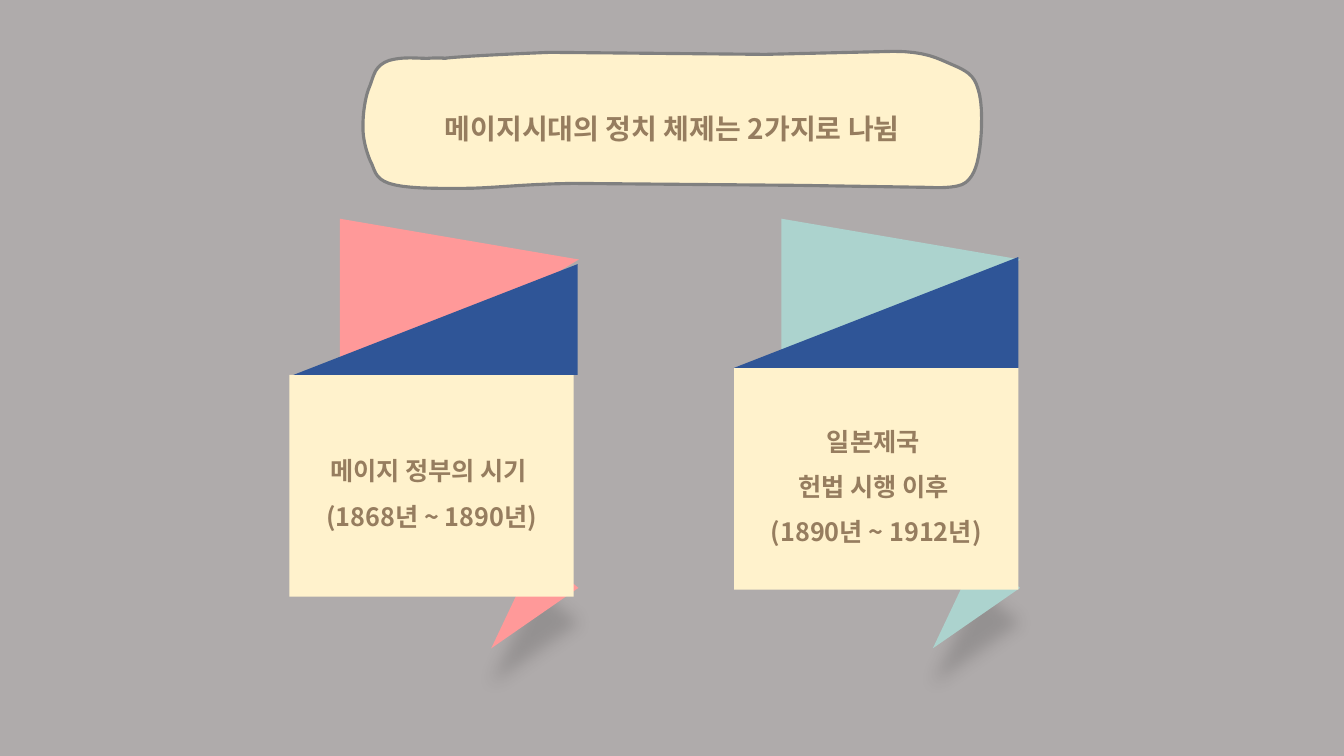
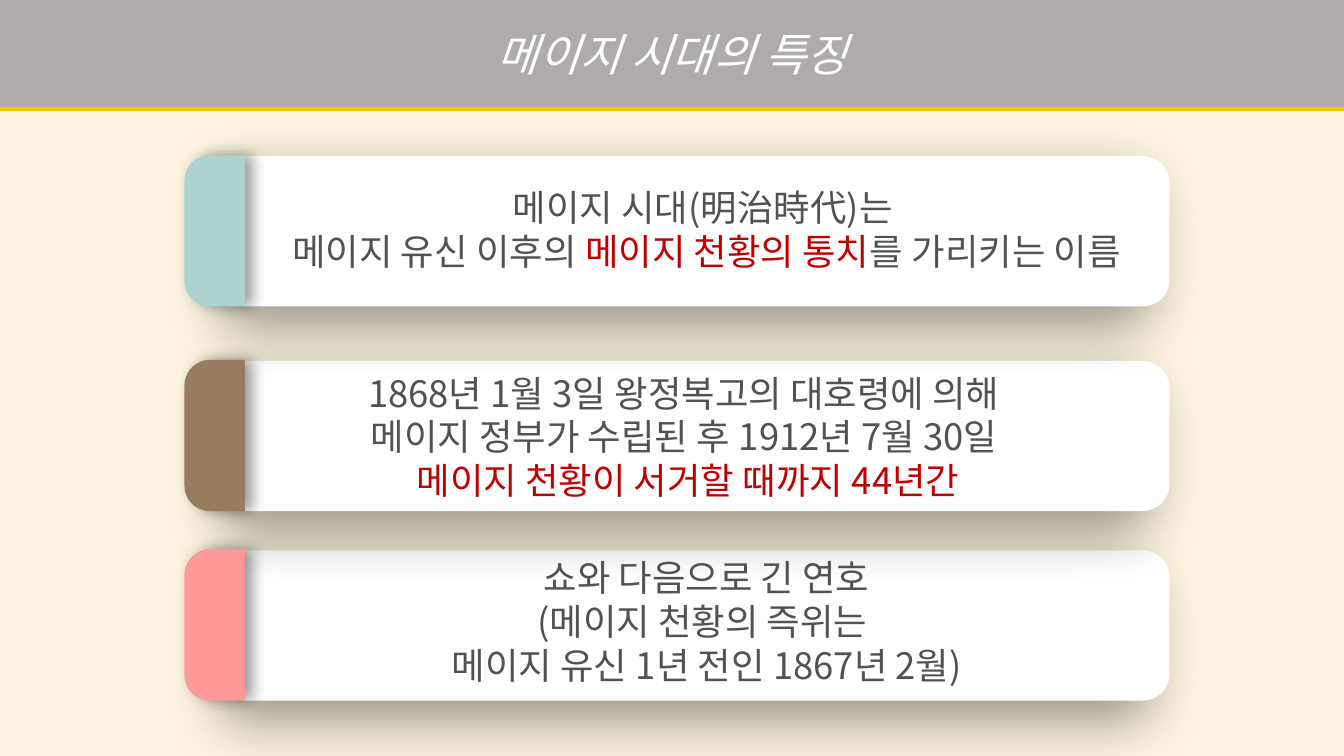
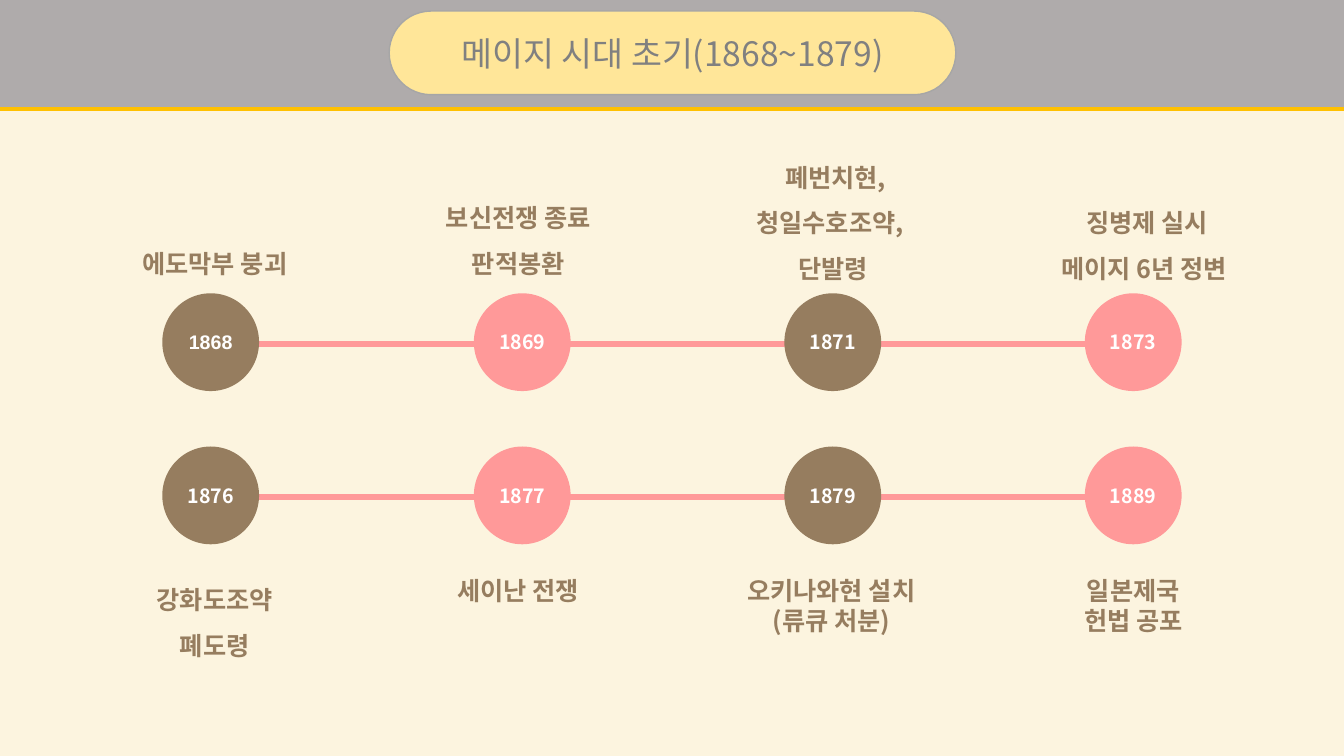
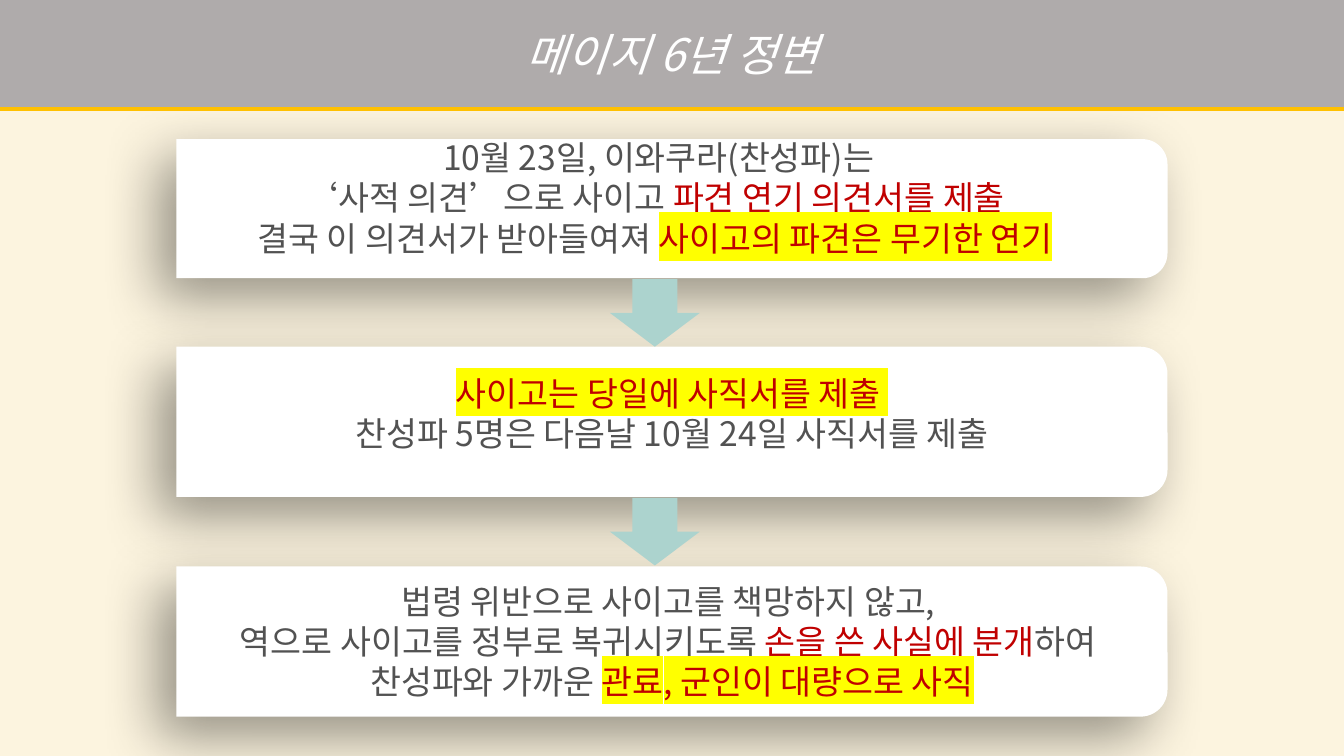
import pptx
import pptx.util
import pptx.dml.color
import pptx.enum.shapes
import pptx.enum.text
import pptx.oxml.ns
import lxml.etree

Inches = pptx.util.Inches
Pt = pptx.util.Pt
KIND = pptx.enum.shapes.MSO_SHAPE
qn = pptx.oxml.ns.qn

FACE = "Noto Sans CJK KR"
GRAY, CREAM, SAND = "AFABAB", "FCF4DF", "FFF2CC"
BROWN, PINK, MINT, NAVY = "967D5F", "FF9999", "ACD3CE", "2F5597"
WHITE, INK, RED, DIM = "FFFFFF", "525252", "C00000", "808080"
YELLOW, GOLD = "FFFF00", "FFC000"

CLAIM = "메이지시대의 정치 체제는 2가지로 나뉨"
RIBBONS = [
    (PINK, 0, (2.87, 3.72), (2.91, 2.62),
     ["메이지 정부의 시기 ", "(1868년 ~ 1890년)"]),
    (MINT, 4.38, (7.28, 3.65), (7.28, 2.55),
     ["일본제국 ", "헌법 시행 이후 ", "(1890년 ~ 1912년)"]),
]
START = (4.39, 0.58)
CURVES = [
    (4.66, 0.55, 5.46, 0.52, 5.46, 0.52), (7.59, 0.54), (8.86, 0.51),
    (9.18, 0.51, 9.3, 0.58, 9.44, 0.64), (9.58, 0.7, 9.66, 0.74, 9.7, 0.88),
    (9.75, 1.02, 9.74, 1.3, 9.72, 1.46), (9.7, 1.61, 9.67, 1.74, 9.58, 1.81),
    (9.5, 1.88, 9.22, 1.86, 9.22, 1.86), (7.93, 1.84), (5.68, 1.82),
    (5.12, 1.83, 4.88, 1.87, 4.58, 1.87), (4.27, 1.87, 4.01, 1.87, 3.86, 1.82),
    (3.71, 1.77, 3.72, 1.68, 3.67, 1.59), (3.63, 1.49, 3.6, 1.38, 3.6, 1.26),
    (3.6, 1.13, 3.62, 0.96, 3.67, 0.85), (3.71, 0.74, 3.72, 0.65, 3.86, 0.6),
    (4, 0.56, 4.15, 0.58, 4.24, 0.58), (4.33, 0.57, 4.5, 0.58, 4.39, 0.58),
]

TRAITS = [
    (MINT, 1.54, (2.13, 1.79, 9.76, 0.98),
     ["메이지 시대(明治時代)는 ",
      ["메이지 유신 이후의 ", ("메이지 천황의 통치", RED), "를 가리키는 이름"]]),
    (BROWN, 3.57, (2.34, 3.63, 8.97, 1.41),
     ["1868년 1월 3일 왕정복고의 대호령에 의해 ",
      "메이지 정부가 수립된 후 1912년 7월 30일 ",
      [("메이지 천황이 서거할 때까지 44년간", RED)]]),
    (PINK, 5.45, (2.04, 5.46, 9.94, 1.75),
     ["쇼와 다음으로 긴 연호", "(메이지 천황의 즉위는 ",
      "메이지 유신 1년 전인 1867년 2월)"]),
]

ERA = "메이지 시대 초기(1868~1879)"
STOPS = [1.61, 4.7, 7.78, 10.76]
ROWS = [(2.91, ["1868", "1869", "1871", "1873"]),
        (4.43, ["1876", "1877", "1879", "1889"])]
LATIN = {"1868": "Arial"}
EVENTS = [
    ((0.44, 2.26, 3.38, 0.48), 1.5, ["에도막부 붕괴"]),
    ((3.45, 1.81, 3.38, 0.94), 1.5, ["보신전쟁 종료", "판적봉환"]),
    ((6.57, 1.41, 3.38, 1.39), 1.5, [" 폐번치현,", "청일수호조약, ", "단발령"]),
    ((9.8, 1.86, 3.1, 0.94), 1.5, [" 징병제 실시", "메이지 6년 정변"]),
    ((0.44, 5.6, 3.38, 0.94), 1.5, ["강화도조약", "폐도령"]),
    ((4.25, 5.66, 1.78, 0.4), 1, ["세이난 전쟁"]),
    ((7.01, 5.66, 2.47, 0.71), 1, [" 오키나와현 설치 ", "(류큐 처분)"]),
    ((10.29, 5.66, 1.9, 0.71), 1, [" 일본제국 ", "헌법 공포"]),
]

STEPS = [
    (1.38, 1.38, (1.09, 1.31, 10.81, 1.38),
     [" 10월 23일, 이와쿠라(찬성파)는",
      ["‘사적 의견’으로 사이고 ", ("파견 연기 의견서를 제출", RED)],
      ["결국 이 의견서가 받아들여져 ",
       ("사이고의 파견은 무기한 연기", RED, YELLOW)]]),
    (3.44, 1.49, (1.21, 3.65, 10.91, 0.91),
     [[("사이고는 당일에 사직서를 제출 ", RED, YELLOW)],
      "찬성파 5명은 다음날 10월 24일 사직서를 제출"]),
    (5.62, 1.49, (1.33, 5.71, 10.67, 1.31),
     ["법령 위반으로 사이고를 책망하지 않고, ",
      ["역으로 사이고를 정부로 복귀시키도록 ", ("손을 쓴 사실에 분개", RED), "하여 "],
      ["찬성파와 가까운 ", ("관료, 군인이 대량으로 사직", RED, YELLOW)]]),
]

deck = pptx.Presentation()
deck.slide_width, deck.slide_height = Inches(13.33), Inches(7.5)


def rgb(hue):
    return pptx.dml.color.RGBColor.from_string(hue)


def sheet(hue):
    slide = deck.slides.add_slide(deck.slide_layouts[6])
    slide.background.fill.solid()
    slide.background.fill.fore_color.rgb = rgb(hue)
    return slide


def paint(item, fill, line=None, wide=1):
    item.shadow.inherit = False
    item.fill.solid()
    item.fill.fore_color.rgb = rgb(fill)
    if line:
        item.line.color.rgb = rgb(line)
        item.line.width = Pt(wide)
    else:
        item.line.fill.background()


def shape(slide, kind, box, fill, adj=(), turn=0, line=None):
    x, y, w, h = box
    if turn in (90, 270):
        x, y, w, h = x + (w - h) / 2, y + (h - w) / 2, h, w
    item = slide.shapes.add_shape(kind, *map(Inches, (x, y, w, h)))
    item.rotation = turn
    for i, val in enumerate(adj):
        item.adjustments[i] = val
    paint(item, fill, line)
    return item


def shade(item, hue, alpha, blur, dist, angle):
    fx = item._element.spPr.find(qn("a:effectLst"))
    drop = lxml.etree.SubElement(
        fx, qn("a:outerShdw"), blurRad=str(Pt(blur)), dist=str(Pt(dist)),
        dir=str(angle * 60000), algn="ctr", rotWithShape="0")
    tint = lxml.etree.SubElement(drop, qn("a:srgbClr"), val=hue)
    lxml.etree.SubElement(tint, qn("a:alpha"), val=str(alpha * 1000))


def mark(run, hue):
    pen = lxml.etree.SubElement(run._r.get_or_add_rPr(), qn("a:highlight"))
    lxml.etree.SubElement(pen, qn("a:srgbClr"), val=hue)


def write(item, lines, size, hue, bold=False, slant=False, gap=1, face=FACE):
    frame = item.text_frame
    frame.word_wrap = True
    for i, line in enumerate(lines):
        para = frame.add_paragraph() if i else frame.paragraphs[0]
        para.alignment = pptx.enum.text.PP_ALIGN.CENTER
        para.line_spacing = gap
        font = para.font
        font.size, font.bold, font.italic = Pt(size), bold, slant
        font.color.rgb = rgb(hue)
        font.name = face
        base = para._p.pPr.find(qn("a:defRPr"))
        lxml.etree.SubElement(base, qn("a:ea"), typeface=face)
        for part in [line] if isinstance(line, str) else line:
            text, *look = [part] if isinstance(part, str) else part
            run = para.add_run()
            run.text = text
            if look:
                run.font.color.rgb = rgb(look[0])
            if len(look) > 1:
                mark(run, look[1])


def label(slide, box, lines, size, hue, **more):
    item = slide.shapes.add_textbox(*map(Inches, box))
    write(item, lines, size, hue, **more)


def band(slide, title=None):
    item = shape(slide, KIND.RECTANGLE, (0, 0, 13.33, 1.06), GRAY)
    shade(item, GOLD, 100, 0, 3, 90)
    if title:
        write(item, [title], 32, WHITE, slant=True)


def card(slide, box):
    item = shape(slide, KIND.ROUND_2_SAME_RECTANGLE, box, WHITE, (0, 0.18), 270)
    shade(item, "000000", 40, 41, 20, 135)


def trace(start, curves, count=8):
    dots = [start]
    for curve in curves:
        if len(curve) == 2:
            dots.append(curve)
            continue
        ends = [dots[-1], curve[:2], curve[2:4], curve[4:]]
        for n in range(1, count + 1):
            t = n / count
            mix = ((1 - t) ** 3, 3 * t * (1 - t) ** 2, 3 * t * t * (1 - t), t ** 3)
            dots.append(tuple(sum(m * e[k] for m, e in zip(mix, ends))
                              for k in (0, 1)))
    return dots


def systems():
    slide = sheet(GRAY)
    for hue, dx, spot, fold, lines in RIBBONS:
        tail = shape(slide, KIND.ISOSCELES_TRIANGLE,
                     (4.94 + dx, 5.55, 0.54, 1.01), hue, [0.55], 218.9)
        shade(tail, "000000", 15, 12, 25, 90)
        shape(slide, KIND.ISOSCELES_TRIANGLE,
              (3.37 + dx, 2.17, 2.37, 1.84), hue, [0.22], 90)
        body = shape(slide, KIND.RECTANGLE, (*spot, 2.82, 2.2), SAND)
        write(body, lines, 18, BROWN, bold=True, gap=1.5)
        flap = shape(slide, KIND.RIGHT_TRIANGLE, (*fold, 2.82, 1.1), NAVY)
        flap._element.spPr.find(qn("a:xfrm")).set("flipH", "1")
    dots = [tuple(map(Inches, dot)) for dot in trace(START, CURVES)]
    pen = slide.shapes.build_freeform(*dots[0])
    pen.add_line_segments(dots[1:], close=True)
    blob = pen.convert_to_shape()
    paint(blob, SAND, DIM, 2.25)
    blob.text_frame.vertical_anchor = pptx.enum.text.MSO_ANCHOR.MIDDLE
    write(blob, [CLAIM], 20, BROWN, bold=True, gap=1.5)


def traits():
    slide = sheet(CREAM)
    for hue, top, box, lines in reversed(TRAITS):
        card(slide, (2.42, top + 0.01, 9.18, 1.49))
    for hue, top, box, lines in TRAITS:
        label(slide, box, lines, 26, INK)
    band(slide, "메이지 시대의 특징")
    for hue, top, box, lines in TRAITS:
        tab = shape(slide, KIND.ROUND_2_SAME_RECTANGLE,
                    (1.83, top, 0.6, 1.5), hue, (0.42, 0), 270)
        shade(tab, "000000", 40, 11, 5, 0)


def years():
    slide = sheet(CREAM)
    band(slide)
    pill = shape(slide, KIND.ROUNDED_RECTANGLE, (3.86, 0.11, 5.62, 0.83),
                 "FFE699", [0.5], line="A6A6A6")
    write(pill, [ERA], 24, DIM)
    for top, names in ROWS:
        mid = Inches(top + 0.5)
        rail = slide.shapes.add_connector(
            pptx.enum.shapes.MSO_CONNECTOR.STRAIGHT,
            Inches(2.5), mid, Inches(11.5), mid)
        rail.line.color.rgb = rgb(PINK)
        rail.line.width = Pt(4.5)
        lxml.etree.SubElement(rail._element.spPr, qn("a:effectLst"))
        for i, (left, name) in enumerate(zip(STOPS, names)):
            disc = shape(slide, KIND.OVAL, (left, top, 0.96, 0.97),
                         (BROWN, PINK)[i % 2])
            write(disc, [name], 14, WHITE, bold=True,
                  face=LATIN.get(name, FACE))
    for box, gap, lines in EVENTS:
        label(slide, box, lines, 18, BROWN, bold=True, gap=gap)


def crisis():
    slide = sheet(CREAM)
    for top, high, box, lines in STEPS:
        card(slide, (1.75, top, 9.83, high))
    for top, high, box, lines in STEPS:
        label(slide, box, lines, 24, INK)
    band(slide, "메이지 6년 정변")
    for top, high, box, lines in STEPS[:-1]:
        shape(slide, KIND.DOWN_ARROW, (6.05, top + high + 0.01, 0.89, 0.67), MINT)


def main():
    systems()
    traits()
    years()
    crisis()
    deck.save("out.pptx")


if __name__ == "__main__":
    main()
